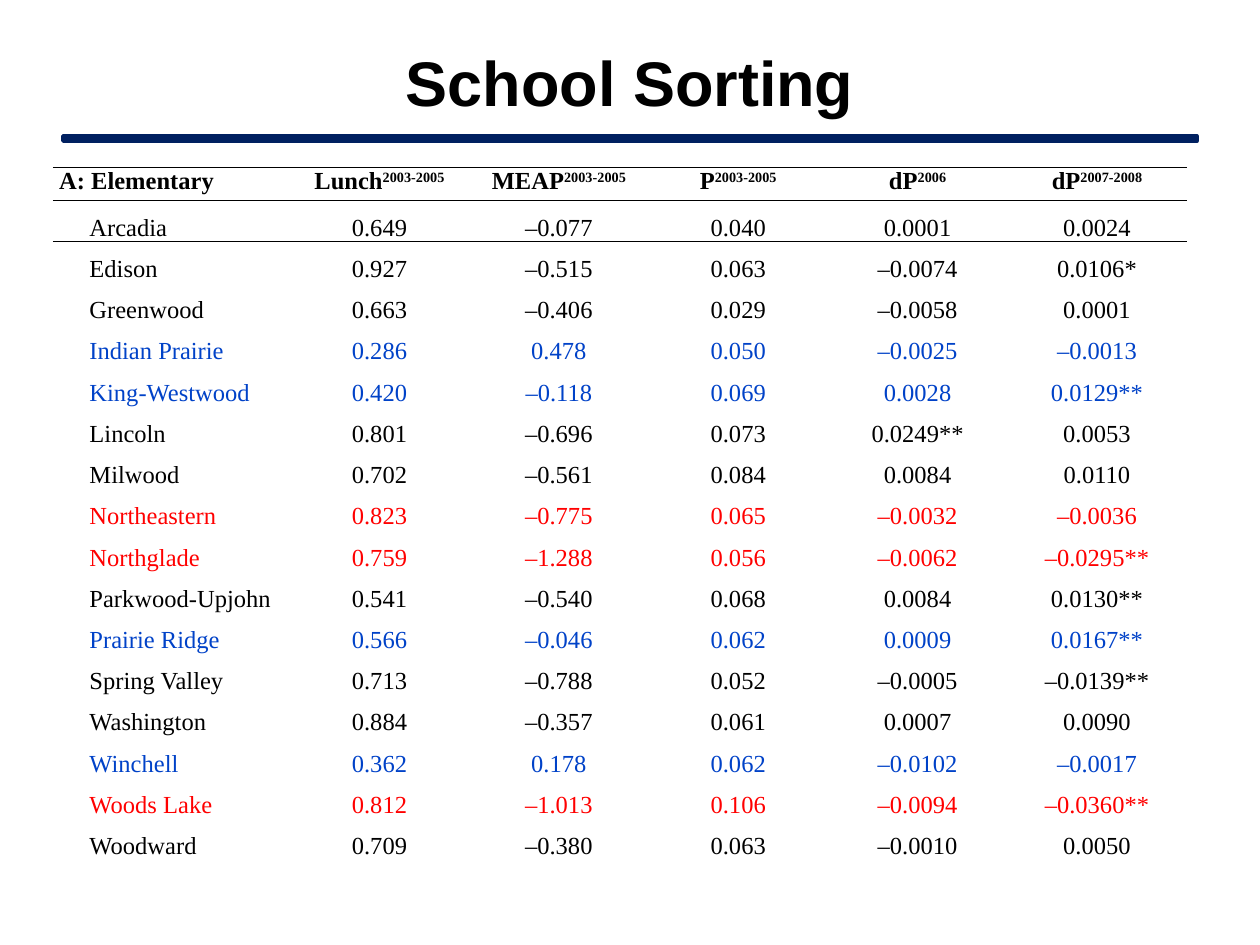
from dataclasses import dataclass

from lxml.etree import SubElement
from pptx import Presentation
from pptx.dml.color import RGBColor
from pptx.enum.shapes import MSO_SHAPE
from pptx.enum.text import MSO_ANCHOR, PP_ALIGN
from pptx.oxml.ns import qn
from pptx.util import Inches, Pt


@dataclass(frozen=True)
class Theme:
    black: str = "000000"
    blue: str = "0042C8"
    red: str = "FF0000"
    navy: str = "002060"
    title_font: str = "Arial"
    table_font: str = "Times New Roman"
    title_size: int = 36
    table_size: int = 14
    line_width: int = 1
    plain_table: str = "{2D5ABB26-0587-4C30-8999-92F81FD0307C}"


THEME = Theme()

HEADERS = [
    ("A: Elementary", ""),
    ("Lunch", "2003-2005"),
    ("MEAP", "2003-2005"),
    ("P", "2003-2005"),
    ("dP", "2006"),
    ("dP", "2007-2008"),
]

SCHOOLS = [
    ("Arcadia", "0.649", "–0.077", "0.040", "0.0001", "0.0024"),
    ("Edison", "0.927", "–0.515", "0.063", "–0.0074", "0.0106*"),
    ("Greenwood", "0.663", "–0.406", "0.029", "–0.0058", "0.0001"),
    ("Indian Prairie", "0.286", "0.478", "0.050", "–0.0025", "–0.0013"),
    ("King-Westwood", "0.420", "–0.118", "0.069", "0.0028", "0.0129**"),
    ("Lincoln", "0.801", "–0.696", "0.073", "0.0249**", "0.0053"),
    ("Milwood", "0.702", "–0.561", "0.084", "0.0084", "0.0110"),
    ("Northeastern", "0.823", "–0.775", "0.065", "–0.0032", "–0.0036"),
    ("Northglade", "0.759", "–1.288", "0.056", "–0.0062", "–0.0295**"),
    ("Parkwood-Upjohn", "0.541", "–0.540", "0.068", "0.0084", "0.0130**"),
    ("Prairie Ridge", "0.566", "–0.046", "0.062", "0.0009", "0.0167**"),
    ("Spring Valley", "0.713", "–0.788", "0.052", "–0.0005", "–0.0139**"),
    ("Washington", "0.884", "–0.357", "0.061", "0.0007", "0.0090"),
    ("Winchell", "0.362", "0.178", "0.062", "–0.0102", "–0.0017"),
    ("Woods Lake", "0.812", "–1.013", "0.106", "–0.0094", "–0.0360**"),
    ("Woodward", "0.709", "–0.380", "0.063", "–0.0010", "0.0050"),
]

SCHOOL_COLORS = {
    **dict.fromkeys(["Indian Prairie", "King-Westwood", "Prairie Ridge", "Winchell"], THEME.blue),
    **dict.fromkeys(["Northeastern", "Northglade", "Woods Lake"], THEME.red),
}


class SlideBuilder:
    def __init__(self, prs, theme):
        self.theme = theme
        self.s = prs.slides.add_slide(prs.slide_layouts[5])

    def style(self, p, name, size, color, bold):
        p.font.name = name
        p.font.size = Pt(size)
        p.font.bold = bold
        p.font.color.rgb = RGBColor.from_string(color)

    def title(self, text, x, y, w, h):
        sp = self.s.shapes.title
        sp.left, sp.top, sp.width, sp.height = map(Inches, (x, y, w, h))
        tf = sp.text_frame
        tf.text = text
        tf.vertical_anchor = MSO_ANCHOR.MIDDLE
        p = tf.paragraphs[0]
        p.alignment = PP_ALIGN.CENTER
        self.style(p, self.theme.title_font, self.theme.title_size, self.theme.black, True)

    def bar(self, x, y, w, h):
        sp = self.s.shapes.add_shape(MSO_SHAPE.RECTANGLE, *map(Inches, (x, y, w, h)))
        sp.shadow.inherit = False
        sp.fill.solid()
        sp.fill.fore_color.rgb = RGBColor.from_string(self.theme.navy)
        sp.line.color.rgb = RGBColor.from_string(self.theme.navy)
        sp.line.width = Pt(2)

    def border(self, cell, side):
        tcPr = cell._tc.get_or_add_tcPr()
        ln = SubElement(tcPr, qn(f"a:ln{side}"), w=str(Pt(self.theme.line_width)))
        fill = SubElement(ln, qn("a:solidFill"))
        SubElement(fill, qn("a:srgbClr"), val=self.theme.black)

    def cell(self, cell, text, color, bold=False, sup="", centered=True, indent=0, sides=""):
        for side in sides:
            self.border(cell, side)
        cell.fill.background()
        cell.margin_left = cell.margin_right = Inches(0.05)
        cell.margin_top = cell.margin_bottom = 0
        cell.vertical_anchor = MSO_ANCHOR.TOP if bold else MSO_ANCHOR.BOTTOM
        p = cell.text_frame.paragraphs[0]
        p.alignment = PP_ALIGN.CENTER if centered else PP_ALIGN.LEFT
        if indent:
            p._p.get_or_add_pPr().set("marL", str(Inches(indent)))
        p.add_run().text = text
        if sup:
            r = p.add_run()
            r.text = sup
            r.font._element.set("baseline", "30000")
        self.style(p, self.theme.table_font, self.theme.table_size, color, bold)

    def table(self, headers, rows, x, y, w, h, first_col, header_h):
        shape = self.s.shapes.add_table(len(rows) + 1, len(headers), *map(Inches, (x, y, w, h)))
        tbl = shape.table
        tbl.horz_banding = False
        tbl._tbl.tblPr.find(qn("a:tableStyleId")).text = self.theme.plain_table
        for i, col in enumerate(tbl.columns):
            col.width = Inches((w - first_col) / (len(headers) - 1) if i else first_col)
        for i, row in enumerate(tbl.rows):
            row.height = Inches((h - header_h) / len(rows) if i else header_h)
        for j, (text, sup) in enumerate(headers):
            self.cell(tbl.cell(0, j), text, self.theme.black, True, sup, j > 0, sides="TB")
        for i, row in enumerate(rows, 1):
            color = SCHOOL_COLORS.get(row[0], self.theme.black)
            for j, text in enumerate(row):
                self.cell(tbl.cell(i, j), text, color, centered=j > 0,
                          indent=0 if j else 0.24, sides="T" if i == 1 else "")


def main():
    prs = Presentation()
    prs.slide_width, prs.slide_height = Inches(10), Inches(7.5)
    slide = SlideBuilder(prs, THEME)
    slide.title("School Sorting", 0.5, 0.17, 9, 0.95)
    slide.bar(0.5, 1.08, 9, 0.04)
    slide.table(HEADERS, SCHOOLS, 0.42, 1.33, 9, 5.5, first_col=1.88, header_h=0.26)
    prs.save("out.pptx")


if __name__ == "__main__":
    main()
